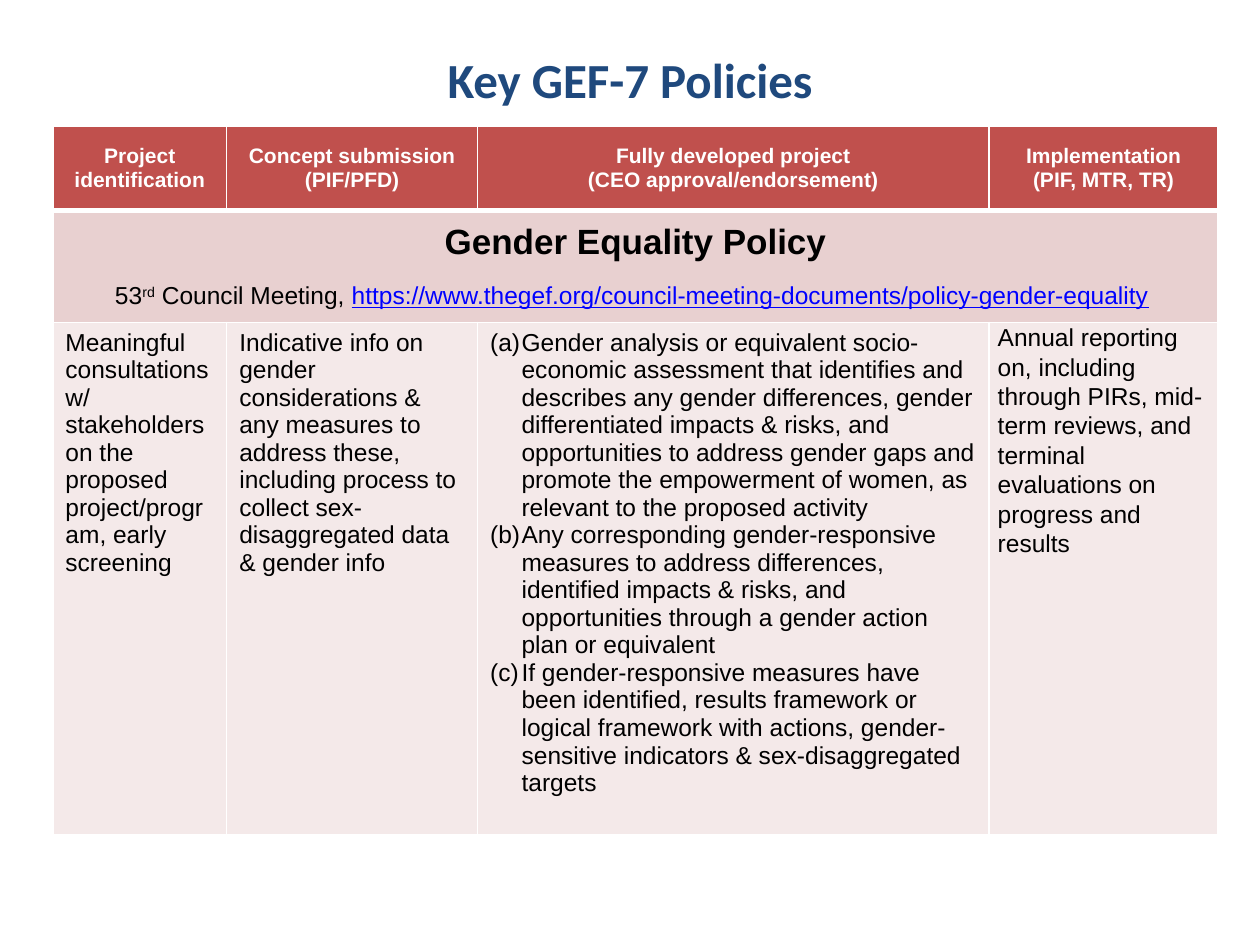
from lxml.etree import SubElement
from pptx import Presentation
from pptx.dml.color import RGBColor
from pptx.enum.text import MSO_ANCHOR as Anchor, PP_ALIGN as Align
from pptx.oxml import parse_xml
from pptx.oxml.ns import nsdecls, qn
from pptx.util import Pt

NAVY = RGBColor(0x1F, 0x49, 0x7D)
RED = RGBColor(0xC0, 0x50, 0x4D)
ROSE = RGBColor(0xE8, 0xD0, 0xD0)
PALE_ROSE = RGBColor(0xF4, 0xE9, 0xE9)
LINK_BLUE = RGBColor(0x00, 0x00, 0xFF)
WHITE = RGBColor(0xFF, 0xFF, 0xFF)
BLACK = RGBColor(0, 0, 0)

COLUMN_WIDTHS = [99.4, 143.3, 292.3, 131]
ROW_HEIGHTS = [48.2, 64.1, 277.9]

STAGES = [
    ["Project identification"],
    ["Concept submission (PIF/PFD)"],
    ["Fully developed project", "(CEO approval/endorsement)"],
    ["Implementation", "(PIF, MTR, TR)"],
]
IDENTIFICATION = [
    "Meaningful consultations w/",
    "stakeholders on the proposed project/program, early screening",
]
CONCEPT = [
    "Indicative info on gender considerations & any measures to address these, "
    "including process to collect sex-disaggregated data & gender info",
]
DEVELOPED = [
    "Gender analysis or equivalent socio-economic assessment that identifies and "
    "describes any gender differences, gender differentiated impacts & risks, and "
    "opportunities to address gender gaps and promote the empowerment of women, "
    "as relevant to the proposed activity",
    "Any corresponding gender-responsive measures to address differences, identified "
    "impacts & risks, and opportunities through a gender action plan or equivalent",
    "If gender-responsive measures have been identified, results framework or logical "
    "framework with actions, gender-sensitive indicators & sex-disaggregated targets",
]
IMPLEMENTATION = [
    "Annual reporting on, including through PIRs, mid-term reviews, and terminal "
    "evaluations on progress and results",
]


def add_text(paragraph, text, size=14, color=BLACK, bold=False, font="Arial",
             underline=False, superscript=False):
    run = paragraph.add_run()
    run.text = text
    run.font.size = Pt(size)
    run.font.name = font
    run.font.bold = bold
    run.font.color.rgb = color
    if underline:
        run.font.underline = True
    if superscript:
        run.font._element.set("baseline", "30000")


def number_paragraph(paragraph, indent=18):
    """Give the paragraph a hanging (a), (b), (c) number."""
    properties = paragraph._p.get_or_add_pPr()
    properties.set("marL", str(Pt(indent)))
    properties.set("indent", str(-Pt(indent)))
    SubElement(properties, qn("a:buFont"), typeface="+mj-lt")
    SubElement(properties, qn("a:buAutoNum"), type="alphaLcParenBoth")


class PolicySlide:
    def __init__(self, presentation):
        self.slide = presentation.slides.add_slide(presentation.slide_layouts[6])

    def title(self, text, left, top, width, height):
        frame = self.slide.shapes.add_textbox(
            Pt(left), Pt(top), Pt(width), Pt(height)).text_frame
        frame.word_wrap = True
        frame.vertical_anchor = Anchor.MIDDLE
        heading = frame.paragraphs[0]
        heading.alignment = Align.CENTER
        add_text(heading, text, size=28, color=NAVY, bold=True, font="Calibri")

    def table(self, left, top, widths, heights, fills):
        grid = self.slide.shapes.add_table(
            len(heights), len(widths), Pt(left), Pt(top),
            Pt(sum(widths)), Pt(sum(heights))).table
        for column, width in zip(grid.columns, widths):
            column.width = Pt(width)
        for index, (row, height) in enumerate(zip(grid.rows, heights)):
            row.height = Pt(height)
            for cell in row.cells:
                cell.fill.solid()
                cell.fill.fore_color.rgb = fills[index]
                self.borders(cell, top=3 if index == 1 else 1,
                             bottom=3 if index == 0 else 1)
        return grid

    def borders(self, cell, top, bottom):
        properties = cell._tc.get_or_add_tcPr()
        sides = [("L", 1), ("R", 1), ("T", top), ("B", bottom)]
        for position, (side, width) in enumerate(sides):
            properties.insert(position, parse_xml(
                f'<a:ln{side} {nsdecls("a")} w="{Pt(width)}"><a:solidFill>'
                f'<a:srgbClr val="{WHITE}"/></a:solidFill></a:ln{side}>'))

    def cell(self, cell, lines, align=Align.LEFT, anchor=Anchor.TOP,
             numbered=False, spacing=None, **text_format):
        cell.vertical_anchor = anchor
        frame = cell.text_frame
        for index, line in enumerate(lines):
            paragraph = frame.add_paragraph() if index else frame.paragraphs[0]
            paragraph.alignment = align
            if spacing:
                paragraph.line_spacing = spacing
            if numbered:
                number_paragraph(paragraph)
            add_text(paragraph, line, **text_format)


def main():
    presentation = Presentation()
    presentation.slide_width, presentation.slide_height = Pt(720), Pt(540)
    page = PolicySlide(presentation)
    page.title("Key GEF-7 Policies", 0, 12.2, 720, 66.2)
    policies = page.table(30.2, 72, COLUMN_WIDTHS, ROW_HEIGHTS,
                          [RED, ROSE, PALE_ROSE])

    for column, stage in enumerate(STAGES):
        page.cell(policies.cell(0, column), stage, align=Align.CENTER,
                  anchor=Anchor.MIDDLE, size=12, color=WHITE, bold=True)

    policy = policies.cell(1, 0)
    policy.merge(policies.cell(1, len(STAGES) - 1))
    page.cell(policy, ["Gender Equality Policy"], align=Align.CENTER,
              anchor=Anchor.MIDDLE, size=20, bold=True)
    meeting = policy.text_frame.add_paragraph()
    meeting.alignment = Align.CENTER
    meeting.space_before = Pt(11.5)
    add_text(meeting, "53")
    add_text(meeting, "rd", superscript=True)
    add_text(meeting, " Council Meeting, ")
    add_text(meeting, "https://www.thegef.org/council-meeting-documents/"
             "policy-gender-equality", color=LINK_BLUE, underline=True)
    add_text(meeting, " ")

    page.cell(policies.cell(2, 0), IDENTIFICATION)
    page.cell(policies.cell(2, 1), CONCEPT)
    page.cell(policies.cell(2, 2), DEVELOPED, numbered=True)
    reporting = policies.cell(2, 3)
    reporting.margin_left = reporting.margin_right = Pt(5)
    reporting.margin_top = reporting.margin_bottom = Pt(0)
    page.cell(reporting, IMPLEMENTATION, spacing=1.07)

    presentation.save("out.pptx")


if __name__ == "__main__":
    main()
